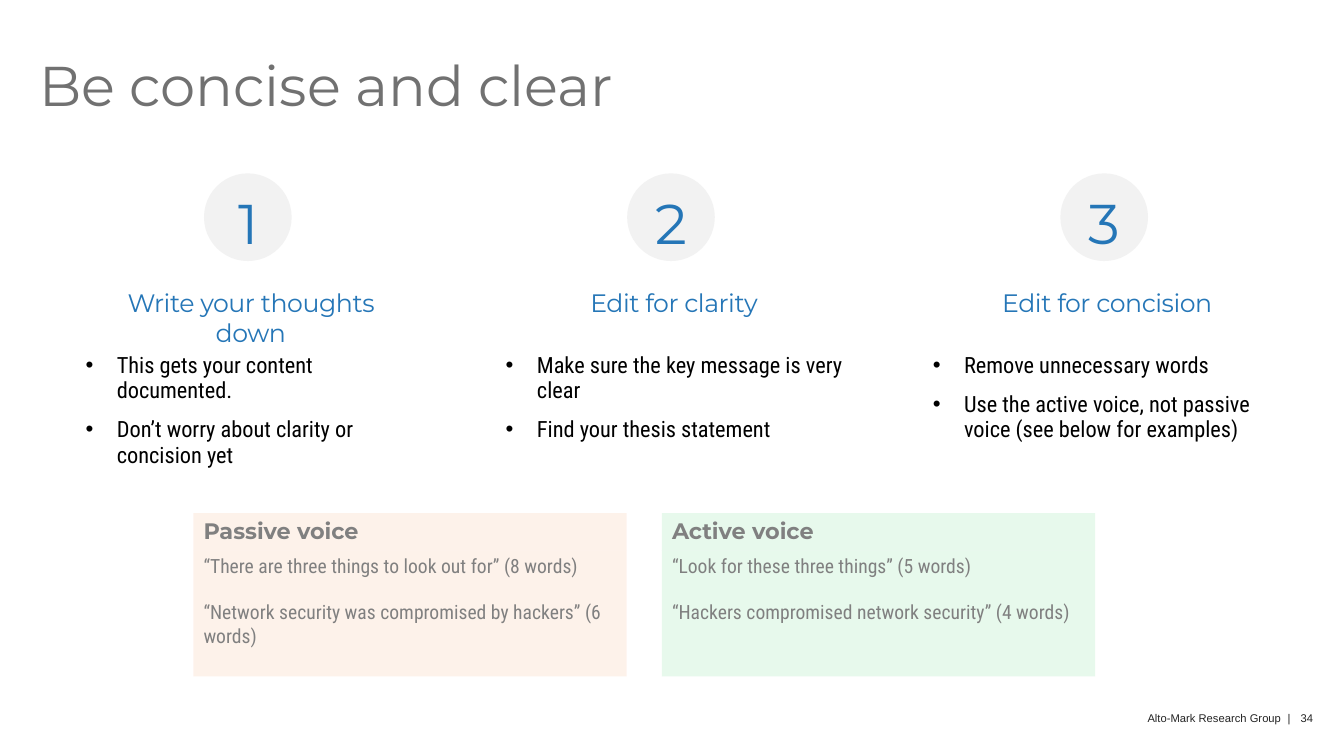
from dataclasses import dataclass

from lxml import etree
from pptx import Presentation
from pptx import util as u
from pptx.dml import color
from pptx.enum import shapes, text
from pptx.oxml import ns


@dataclass(frozen=True)
class Theme:
    heading_font: str = "Montserrat"
    body_font: str = "Roboto Condensed"
    footer_font: str = "Arial"
    title_size: int = 40
    heading_size: int = 18
    body_size: int = 16
    quote_size: int = 14
    footer_size: int = 8
    title: str = "717171"
    accent: str = "2576B7"
    body: str = "000000"
    quote: str = "808080"
    footer: str = "242424"
    circle: str = "F2F2F2"
    passive: str = "F9C9A8"
    active: str = "9BE6B0"
    tint: str = "23000"


COLUMNS, ROWS = 133.4, 75
NO_GRID_STYLE = "{2D5ABB26-0587-4C30-8999-92F81FD0307C}"


class Deck:
    def __init__(self, theme):
        self.theme = theme
        self.file = Presentation()
        self.file.slide_width = u.Inches(13.34)
        self.file.slide_height = u.Inches(7.5)
        self.slide = self.file.slides.add_slide(self.file.slide_layouts[6])

    def across(self, columns):
        return u.Emu(round(self.file.slide_width * columns / COLUMNS))

    def down(self, rows):
        return u.Emu(round(self.file.slide_height * rows / ROWS))

    def area(self, left, top, width, height):
        return (self.across(left), self.down(top),
                self.across(width), self.down(height))

    def style(self, paragraph, font, size, tone, bold=False):
        paragraph.font.name = font
        paragraph.font.size = u.Pt(size)
        paragraph.font.bold = bold
        paragraph.font.color.rgb = color.RGBColor.from_string(tone)

    def frame(self, *area):
        frame = self.slide.shapes.add_textbox(*self.area(*area)).text_frame
        frame.word_wrap = True
        frame.margin_left = frame.margin_right = 0
        frame.margin_top = frame.margin_bottom = 0
        return frame

    def line(self, words, area, size, tone, align=text.PP_ALIGN.LEFT,
             spacing=1.0, tracking=0):
        paragraph = self.frame(*area).paragraphs[0]
        paragraph.alignment = align
        paragraph.line_spacing = spacing
        run = paragraph.add_run()
        run.text = words
        if tracking:
            run.font._element.set("spc", str(tracking))
        self.style(paragraph, self.theme.heading_font, size, tone)

    def circle(self, center, top, size):
        disc = self.slide.shapes.add_shape(
            shapes.MSO_SHAPE.OVAL, *self.area(center - size / 2, top, size, size))
        disc.shadow.inherit = False
        disc.fill.solid()
        disc.fill.fore_color.rgb = color.RGBColor.from_string(self.theme.circle)
        disc.line.fill.background()

    def bullets(self, points, area):
        frame = self.frame(*area)
        for index, point in enumerate(points):
            paragraph = frame.add_paragraph() if index else frame.paragraphs[0]
            paragraph.text = point
            properties = paragraph._p.get_or_add_pPr()
            indent = self.across(3.1)
            properties.set("marL", str(indent))
            properties.set("indent", str(-indent))
            etree.SubElement(properties, ns.qn("a:buFont"), typeface="Arial")
            etree.SubElement(properties, ns.qn("a:buChar"), char="•")
            paragraph.line_spacing = u.Pt(18)
            paragraph.space_before = u.Pt(10 if index else 0)
            self.style(paragraph, self.theme.body_font,
                       self.theme.body_size, self.theme.body)

    def voice_table(self, heading, quotes, tone, left):
        heights = (3.7, 12.5)
        table = self.slide.shapes.add_table(
            2, 1, *self.area(left, 50.9, 43, sum(heights))).table
        table.first_row = table.horz_banding = False
        table._tbl.tblPr.find(ns.qn("a:tableStyleId")).text = NO_GRID_STYLE
        for row, height in zip(table.rows, heights):
            row.height = self.down(height)
            cell = row.cells[0]
            cell.fill.solid()
            cell.fill.fore_color.rgb = color.RGBColor.from_string(tone)
            shade = cell._tc.tcPr.find(".//" + ns.qn("a:srgbClr"))
            etree.SubElement(shade, ns.qn("a:alpha"), val=self.theme.tint)
        title, body = (table.cell(row, 0).text_frame for row in range(2))
        title.text = heading
        self.style(title.paragraphs[0], self.theme.heading_font,
                   self.theme.body_size, self.theme.quote, bold=True)
        body.text = "\n".join(quotes)
        for index, paragraph in enumerate(body.paragraphs):
            paragraph.space_before = u.Pt(16.5 if index else 0)
            self.style(paragraph, self.theme.body_font,
                       self.theme.quote_size, self.theme.quote)

    def footer(self, parts, area, stops):
        paragraph = self.frame(*area).paragraphs[0]
        paragraph.add_run().text = "\t".join(parts)
        tabs = etree.SubElement(paragraph._p.get_or_add_pPr(), ns.qn("a:tabLst"))
        for stop in stops:
            etree.SubElement(tabs, ns.qn("a:tab"),
                             pos=str(self.across(stop)), algn="l")
        self.style(paragraph, self.theme.footer_font,
                   self.theme.footer_size, self.theme.footer)


STEPS = [
    ("Write your thoughts down", 24.6, 8.5, 31.9,
     ["This gets your content documented.",
      "Don’t worry about clarity or concision yet"]),
    ("Edit for clarity", 66.6, 50.2, 34,
     ["Make sure the key message is very clear",
      "Find your thesis statement"]),
    ("Edit for concision", 109.6, 92.6, 33.8,
     ["Remove unnecessary words",
      "Use the active voice, not passive voice (see below for examples)"]),
]


def main():
    theme = Theme()
    deck = Deck(theme)
    center = text.PP_ALIGN.CENTER
    deck.line("Be concise and clear", (3.9, 5.8, 91.1, 8.5),
              theme.title_size, theme.title, spacing=0.9)
    for number, (heading, middle, left, width, points) in enumerate(STEPS, 1):
        deck.circle(middle, 17.2, 8.7)
        deck.line(str(number), (middle - 5.5, 18, 11.1, 7.8),
                  theme.title_size, theme.accent, center, spacing=1.1)
        deck.line(heading, (middle - 15.1, 28.5, 30.8, 6.1),
                  theme.heading_size, theme.accent, center, tracking=-30)
        deck.bullets(points, (left, 35, width, 11.1))
    deck.voice_table(
        "Passive voice",
        ["“There are three things to look out for” (8 words)",
         "“Network security was compromised by hackers” (6 words)"],
        theme.passive, 19.2)
    deck.voice_table(
        "Active voice",
        ["“Look for these three things” (5 words)",
         "“Hackers compromised network security” (4 words)"],
        theme.active, 65.7)
    deck.footer(["Alto-Mark Research Group", "|", "34"],
                (113.9, 70.6, 18, 1.3), (13.9, 15.2))
    deck.file.save("out.pptx")


if __name__ == "__main__":
    main()
